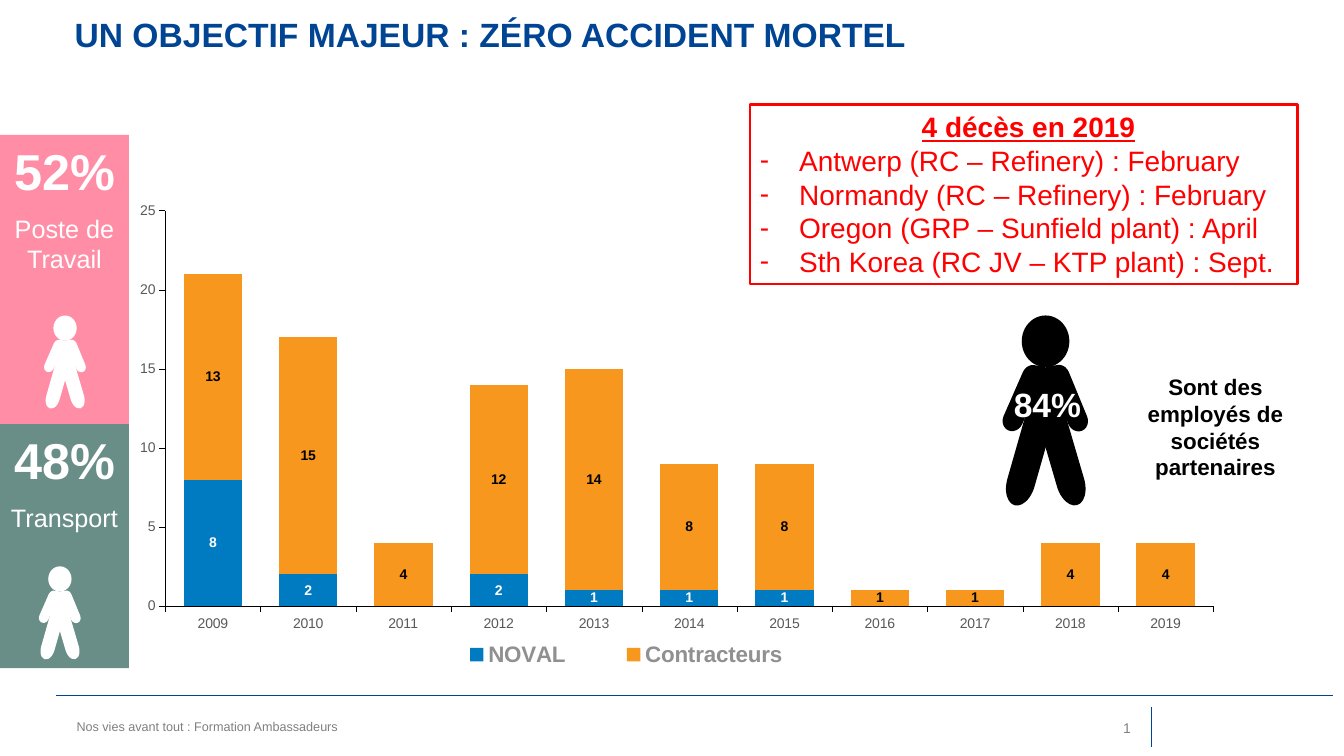
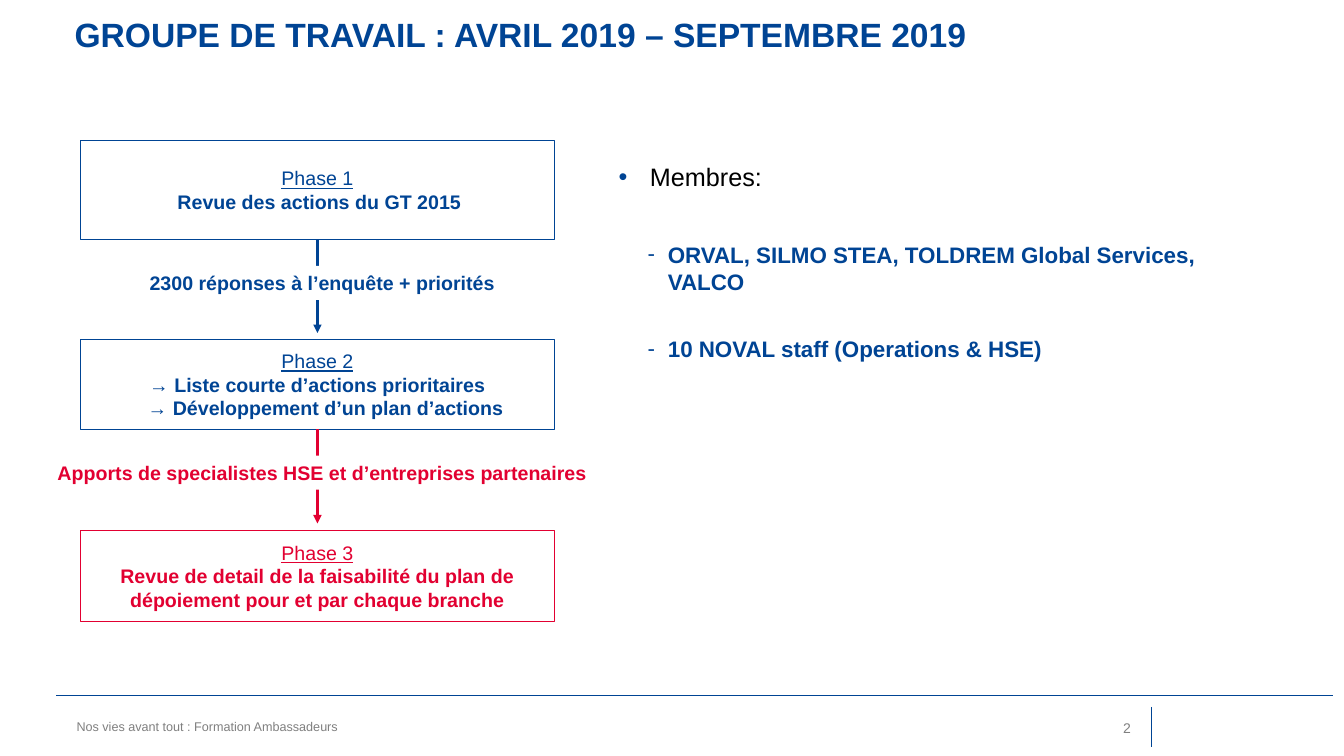
from dataclasses import dataclass
from lxml.etree import SubElement
from pptx import Presentation
from pptx.chart.data import CategoryChartData as Data
from pptx.dml.color import RGBColor as Rgb
from pptx.enum.chart import XL_CHART_TYPE as Kind, XL_LEGEND_POSITION as Side, XL_TICK_MARK as Tick
from pptx.enum.shapes import MSO_CONNECTOR as Link, MSO_SHAPE as Form
from pptx.enum.text import MSO_ANCHOR as Anchor, MSO_AUTO_SIZE as Fit, PP_ALIGN as Align
from pptx.oxml import parse_xml
from pptx.oxml.ns import qn
from pptx.util import Cm, Pt


@dataclass(frozen=True)
class Theme:
    face: str = "Arial"
    blue: str = "004494"
    red: str = "E20031"
    alert: str = "FF0000"
    pink: str = "FF8DA6"
    green: str = "698E87"
    bar: str = "007AC0"
    gold: str = "F8971D"
    white: str = "FFFFFF"
    black: str = "000000"
    gray: str = "808080"
    axis: str = "595959"
    key: str = "909090"
    huge: int = 36
    head: int = 24
    big: int = 20
    lead: int = 18
    body: int = 16
    step: int = 14
    small: int = 10
    foot: int = 9


T = Theme()
MID, LEFT, RIGHT = Align.CENTER, Align.LEFT, Align.RIGHT

FOOT = "Nos vies avant tout : Formation Ambassadeurs"
HEADS = (
    "UN OBJECTIF MAJEUR : ZÉRO ACCIDENT MORTEL",
    "GROUPE DE TRAVAIL : AVRIL 2019 – SEPTEMBRE 2019",
)
RULES = ((1.42, 17.53, 33.6, 17.53, 0.75), (29.01, 17.81, 29.01, 18.82, 0.5))

YEARS = [str(year) for year in range(2009, 2020)]
BARS = (
    ("NOVAL", (8, 2, None, 2, 1, 1, 1, None, None, None, None), T.bar, T.white),
    ("Contracteurs", (13, 15, 4, 12, 14, 8, 8, 1, 1, 4, 4), T.gold, T.black),
)
TILES = (
    ("52%", "Poste de Travail", 3.4, 7.29, T.pink),
    ("48%", "Transport", 10.69, 6.15, T.green),
)
DEATHS = "4 décès en 2019"
SITES = (
    "Antwerp (RC – Refinery) : February",
    "Normandy (RC – Refinery) : February",
    "Oregon (GRP – Sunfield plant) : April",
    "Sth Korea (RC JV – KTP plant) : Sept.",
)
SHARE = "84%"
STAFF = "Sont des employés de sociétés partenaires"
LIMBS = (
    (Form.OVAL, 0, 0.65, 1.2, 1.3, 0),
    (Form.FLOWCHART_TERMINATOR, -0.58, 2.08, 1.78, 0.51, 293.7),
    (Form.FLOWCHART_TERMINATOR, 0.58, 2.08, 1.78, 0.51, 247.6),
    (Form.FLOWCHART_TERMINATOR, -0.28, 3.02, 3.66, 0.71, 285.9),
    (Form.FLOWCHART_TERMINATOR, 0.28, 3.02, 3.66, 0.71, 253.7),
)
MEN = (
    (1.51, 14.27, 0.49, T.white),
    (1.64, 7.95, 0.49, T.white),
    (26.35, 7.95, 1, T.black),
)

PHASES = (
    ("Phase 1", (("Revue des actions du GT 2015", 0.1),), 3.53, 2.51, T.blue),
    ("Phase 2", (("→ Liste courte d’actions prioritaires", 0),
                 ("→ Développement d’un plan d’actions", 0.42)), 8.56, 2.26, T.blue),
    ("Phase 3", (("Revue de detail de la faisabilité du plan de dépoiement pour et par chaque branche", 0),),
     13.36, 2.31, T.red),
)
LINKS = (
    ("2300 réponses à l’enquête + priorités", 9.5, T.blue),
    ("Apports de specialistes HSE et d’entreprises partenaires", 14.17, T.red),
)
TEAM = "Membres:"
CREW = (
    ("ORVAL, SILMO STEA, TOLDREM Global Services, VALCO", 35),
    ("10 NOVAL staff (Operations & HSE)", 29),
)


def put(item, **vals):
    for name, val in vals.items():
        setattr(item, name, val)


def ink(font, size, hue, **look):
    put(font, name=T.face, size=Pt(size), **look)
    font.color.rgb = Rgb.from_string(hue)


def area(*nums):
    return [Cm(num) for num in nums]


def mark(para, sign, hue):
    props = para._p.get_or_add_pPr()
    tint = SubElement(props, qn("a:buClr"))
    SubElement(tint, qn("a:srgbClr"), val=hue)
    SubElement(props, qn("a:buFont"), typeface=T.face)
    SubElement(props, qn("a:buChar"), char=sign)


def line(text, size, hue, align=LEFT, pad=0, hang=0, sign=None, gap=0, level=0, **look):
    return dict(text=text, size=size, hue=hue, align=align, pad=pad, hang=hang,
                sign=sign, gap=gap, level=level, look=look)


def say(frame, rows, anchor=Anchor.TOP, inset=(0.25, 0.13, 0.25, 0.13), wrap=True):
    left, top, right, bottom = area(*inset)
    put(frame, word_wrap=wrap, auto_size=Fit.NONE, vertical_anchor=anchor,
        margin_left=left, margin_top=top, margin_right=right, margin_bottom=bottom)
    for num, row in enumerate(rows):
        para = frame.paragraphs[0] if num == 0 else frame.add_paragraph()
        put(para, alignment=row["align"], level=row["level"],
            space_before=Pt(row["gap"]), space_after=Pt(0))
        props = para._p.get_or_add_pPr()
        props.set("marL", str(Cm(row["pad"])))
        props.set("indent", str(Cm(-row["hang"])))
        if row["sign"]:
            mark(para, row["sign"], row["hue"] if row["level"] else T.blue)
        run = para.add_run()
        run.text = row["text"]
        ink(run.font, row["size"], row["hue"], **row["look"])


def block(shapes, form, box, fill=None, edge=None, width=0.75):
    item = shapes.add_shape(form, *area(*box))
    item.shadow.inherit = False
    if fill:
        item.fill.solid()
        item.fill.fore_color.rgb = Rgb.from_string(fill)
    else:
        item.fill.background()
    if edge:
        item.line.color.rgb = Rgb.from_string(edge)
        item.line.width = Pt(width)
    else:
        item.line.fill.background()
    return item


def note(slide, box, rows, **opts):
    item = slide.shapes.add_textbox(*area(*box))
    say(item.text_frame, rows, **opts)
    return item


def rule(slide, ends, hue, width, arrow=False):
    item = slide.shapes.add_connector(Link.STRAIGHT, *area(*ends))
    item.line.color.rgb = Rgb.from_string(hue)
    item.line.width = Pt(width)
    if arrow:
        SubElement(item.line._get_or_add_ln(), qn("a:tailEnd"), type="triangle")
    SubElement(item._element.spPr, qn("a:effectLst"))


def start(deck, kind, text, num):
    slide = deck.slides.add_slide(deck.slide_layouts[kind])
    title = slide.shapes.title
    put(title, **dict(zip(("left", "top", "width", "height"), area(0.38, 0, 33.17, 1.7))))
    say(title.text_frame, [line(text, T.head, T.blue, pad=1.5, bold=True)],
        anchor=Anchor.MIDDLE, inset=(0, 0.13, 0.25, 0.13))
    for *ends, width in RULES:
        rule(slide, ends, T.blue, width)
    note(slide, (1.68, 17.93, 9.45, 0.76), [line(FOOT, T.foot, T.gray)], anchor=Anchor.MIDDLE)
    page = note(slide, (26.06, 17.86, 2.69, 0.99),
                [line(str(num), T.small, T.gray, RIGHT)], anchor=Anchor.MIDDLE)
    run = page.text_frame.paragraphs[0].runs[0]._r
    run.tag = qn("a:fld")
    run.set("id", "{B6F15528-21DE-4FAA-801E-634DDDAF4B2B}")
    run.set("type", "slidenum")
    return slide


def place(node, at, spot, inner=False):
    for old in node.findall(qn("c:layout")):
        node.remove(old)
    root = parse_xml('<c:layout xmlns:c="http://schemas.openxmlformats.org/drawingml/2006/chart"/>')
    hold = SubElement(root, qn("c:manualLayout"))
    pairs = [("layoutTarget", "inner")] if inner else []
    pairs += [("xMode", "edge"), ("yMode", "edge"), *zip("xywh", map(str, spot))]
    for name, val in pairs:
        SubElement(hold, qn("c:" + name), val=val)
    node.insert(at, root)


def plot(slide):
    data = Data()
    data.categories = YEARS
    for name, vals, *_ in BARS:
        data.add_series(name, vals)
    chart = slide.shapes.add_chart(Kind.COLUMN_STACKED, *area(1.96, 2.62, 29.41, 14.53), data).chart
    put(chart, has_title=False, has_legend=True)
    ink(chart.font, T.small, T.black)
    put(chart.legend, position=Side.BOTTOM, include_in_layout=False)
    ink(chart.legend.font, T.body, T.key, bold=True)
    put(chart.value_axis, minimum_scale=0, maximum_scale=25, major_unit=5)
    for axis in (chart.category_axis, chart.value_axis):
        put(axis, has_major_gridlines=False, major_tick_mark=Tick.OUTSIDE, minor_tick_mark=Tick.NONE)
        ink(axis.tick_labels.font, T.small, T.axis)
        axis.format.line.color.rgb = Rgb.from_string(T.black)
        axis.format.line.width = Pt(0.17)
    put(chart.plots[0], gap_width=63, overlap=100, vary_by_categories=False)
    for row, (_, _, fill, hue) in zip(chart.plots[0].series, BARS):
        row.invert_if_negative = False
        row.format.fill.solid()
        row.format.fill.fore_color.rgb = Rgb.from_string(fill)
        row.data_labels.show_value = True
        ink(row.data_labels.font, T.small, hue, bold=True)
    tree = chart._chartSpace.chart
    place(tree.plotArea, 0, (0.075, 0.185, 0.898, 0.686), inner=True)
    place(tree.find(qn("c:legend")), 1, (0.29, 0.92, 0.36, 0.07))


def man(slide, mid, top, scale, hue):
    group = slide.shapes.add_group_shape()
    for form, across, down, wide, high, turn in LIMBS:
        wide, high = wide * scale, high * scale
        box = (mid + across * scale - wide / 2, top + down * scale - high / 2, wide, high)
        block(group.shapes, form, box, hue).rotation = turn


def toll(deck):
    slide = start(deck, 5, HEADS[0], 5)
    plot(slide)
    card = block(slide.shapes, Form.RECTANGLE, (18.9, 2.64, 13.79, 4.52), edge=T.alert, width=2)
    rows = [line(DEATHS, T.big, T.alert, MID, bold=True, underline=True)]
    rows += [line(site, T.big, T.alert, pad=0.99, hang=0.99, sign="-", level=1) for site in SITES]
    say(card.text_frame, rows, inset=(0.25, 0.13, 0, 0.13))
    for rate, name, top, high, fill in TILES:
        tile = block(slide.shapes, Form.RECTANGLE, (0, top, 3.25, high), fill)
        say(tile.text_frame, [line(rate, T.huge, T.white, MID, bold=True),
                              line(name, T.lead, T.white, MID, gap=9)])
    for spot in MEN:
        man(slide, *spot)
    note(slide, (25.3, 9.55, 2.24, 1.27), [line(SHARE, T.head, T.white, bold=True)], wrap=False)
    note(slide, (27.94, 9.27, 5.38, 3), [line(STAFF, T.body, T.black, MID, bold=True)])


def team(deck):
    slide = start(deck, 1, HEADS[1], 6)
    body = slide.placeholders[1]
    put(body, **dict(zip(("left", "top", "width", "height"), area(15.34, 3.94, 16.84, 12.83))))
    rows = [line(TEAM, T.lead, T.black, pad=0.79, hang=0.79, sign="•")]
    rows += [line(text, T.body, T.blue, pad=1.24, hang=0.51, sign="-", gap=gap, level=1, bold=True)
             for text, gap in CREW]
    say(body.text_frame, rows)
    for name, tasks, top, high, hue in PHASES:
        card = block(slide.shapes, Form.RECTANGLE, (2.03, top, 11.94, high), edge=hue)
        rows = [line(name, T.step, hue, MID, underline=True)]
        rows += [line(task, T.step, hue, MID, pad=pad, bold=True) for task, pad in tasks]
        say(card.text_frame, rows, anchor=Anchor.MIDDLE, inset=(0.1,) * 4)
    mid = 2.03 + 11.94 / 2
    for (text, wide, hue), prev, after in zip(LINKS, PHASES, PHASES[1:]):
        base = prev[2] + prev[3]
        rule(slide, (mid, base, mid, after[2] - 0.17), hue, 2, arrow=True)
        tag = block(slide.shapes, Form.RECTANGLE, (mid - wide / 2, base + 0.66, wide, 0.86), T.white)
        say(tag.text_frame, [line(text, T.step, hue, MID, pad=0.25, bold=True)],
            anchor=Anchor.MIDDLE, wrap=False)


def main():
    deck = Presentation()
    put(deck, slide_width=Cm(33.87), slide_height=Cm(19.05))
    toll(deck)
    team(deck)
    deck.save("out.pptx")


if __name__ == "__main__":
    main()
